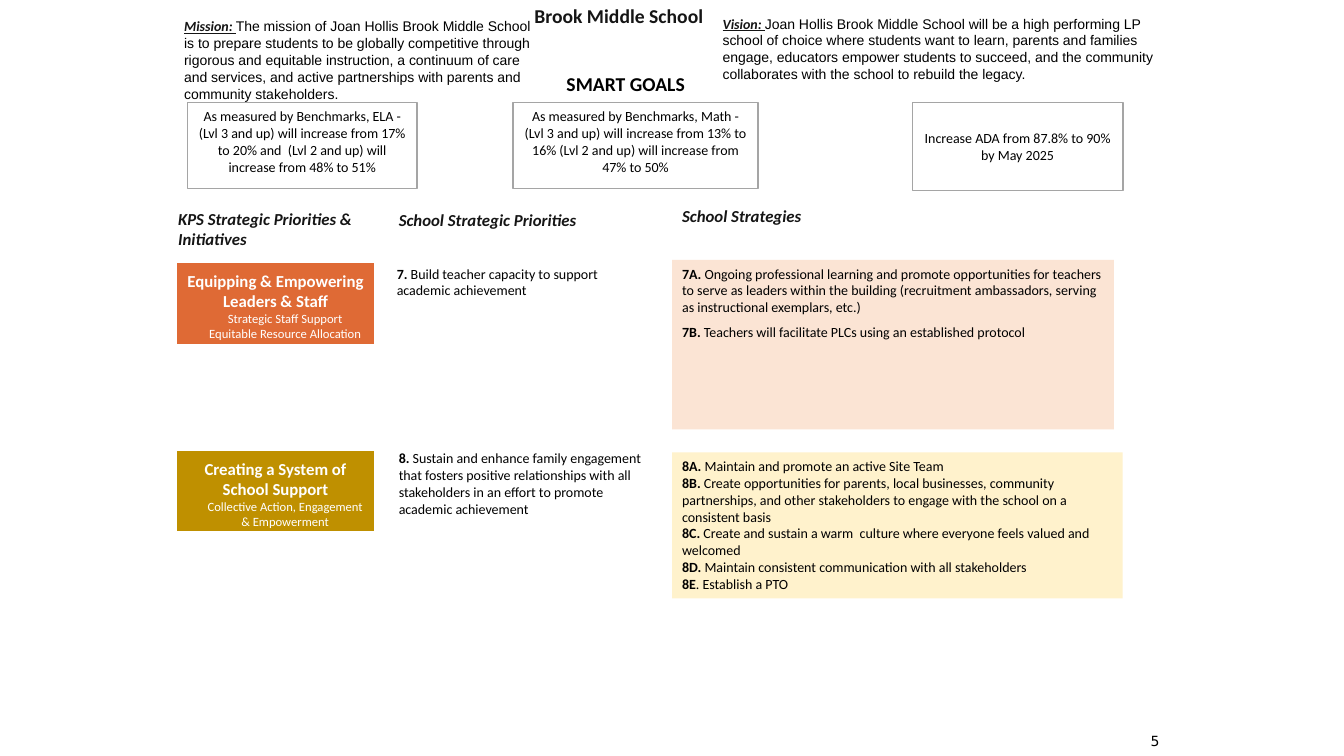
from pptx import Presentation
from pptx.dml.color import RGBColor
from pptx.enum.shapes import MSO_SHAPE
from pptx.enum.text import MSO_ANCHOR, MSO_AUTO_SIZE, PP_ALIGN
from pptx.oxml.ns import qn
from pptx.util import Cm, Pt
from lxml import etree

RECTANGLE = MSO_SHAPE.RECTANGLE
TOP, MIDDLE = MSO_ANCHOR.TOP, MSO_ANCHOR.MIDDLE
NO_FIT = MSO_AUTO_SIZE.NONE
LEFT, CENTER, RIGHT = PP_ALIGN.LEFT, PP_ALIGN.CENTER, PP_ALIGN.RIGHT

COLORS = {
    "black": "000000", "ink": "151515", "white": "FFFFFF", "gray": "A5A5A5",
    "orange": "DF6A35", "peach": "FBE4D4", "gold": "BF9000", "cream": "FFF2CC",
}


def style(size, color="black", name="Calibri", **extra):
    values = {"size": Pt(size), "name": name, "bold": False, "italic": False}
    return {"color": color, "font": {**values, **extra}}


STYLES = {
    "text": style(10),
    "label": style(10, bold=True),
    "title": style(14, "ink", bold=True),
    "goals": style(14, bold=True),
    "heading": style(12, "ink", bold=True, italic=True),
    "lead": style(10, "ink", bold=True, italic=True, underline=True),
    "statement": style(10, name="Arial"),
    "priority": style(12, "white", bold=True),
    "initiative": style(9, "white"),
    "number": style(10, name="DejaVu Sans"),
}


def color(name):
    return RGBColor.from_string(COLORS[name])


def set_values(target, values):
    for name, value in values.items():
        setattr(target, name, value)


def write(box, paras, align=LEFT, anchor=TOP, inset=0.13, before=0):
    frame = box.text_frame
    set_values(frame, {
        "word_wrap": True, "auto_size": NO_FIT, "vertical_anchor": anchor,
        "margin_left": Cm(0.25), "margin_right": Cm(0.25),
        "margin_top": Cm(inset), "margin_bottom": Cm(inset),
    })
    for index, spans in enumerate(paras):
        para = frame.add_paragraph() if index else frame.paragraphs[0]
        set_values(para, {"alignment": align, "space_before": Pt(before)})
        indent = Cm(0.48) if spans[0][1] == "initiative" else 0
        properties = para._p.get_or_add_pPr()
        properties.set("marL", str(int(indent)))
        properties.set("indent", "0")
        etree.SubElement(properties, qn("a:buNone"))
        for text, style_name in spans:
            span = para.add_run()
            span.text = text
            set_values(span.font, STYLES[style_name]["font"])
            span.font.color.rgb = color(STYLES[style_name]["color"])


def place(box, area):
    set_values(box, dict(zip(("left", "top", "width", "height"), map(Cm, area))))


def paint(box, fill):
    box.fill.solid()
    box.fill.fore_color.rgb = color(fill)


def add_text(page, area, paras, **layout):
    box = page.shapes.add_textbox(*map(Cm, area))
    write(box, paras, **layout)


def add_panel(page, area, fill, line, width, paras, **layout):
    box = page.shapes.add_shape(RECTANGLE, *map(Cm, area))
    box.shadow.inherit = False
    paint(box, fill)
    box.line.color.rgb = color(line)
    box.line.width = Pt(width)
    write(box, paras, align=CENTER, **layout)


def fill_list(box, area, fill, items, before):
    place(box, area)
    paint(box, fill)
    paras = [[(label, "label"), (text, "text")] for label, text in items]
    write(box, paras, before=before)


def add_priority(page, top, fill, name, initiatives):
    paras = [[(name, "priority")]] + [[(text, "initiative")] for text in initiatives]
    add_panel(page, (4.39, top, 5.11, 2.16), fill, "white", 4, paras, inset=0.25)


def main():
    deck = Presentation()
    deck.slide_width, deck.slide_height = Cm(33.87), Cm(19.05)
    page = deck.slides.add_slide(deck.slide_layouts[3])
    title, staff_list, support_list = page.placeholders

    place(title, (12.85, -0.15, 5.49, 1.12))
    write(title, [[("Brook Middle School", "title")]], align=CENTER, inset=0.25)
    add_text(page, (13.56, 1.57, 4.42, 1.12), [[("SMART GOALS", "goals")]],
             align=CENTER, inset=0.25)

    statements = [
        ((4.39, 0.2, 9.4, 2.64), "Mission: ",
         "The mission of Joan Hollis Brook Middle School is to prepare students to be "
         "globally competitive through rigorous and equitable instruction, a continuum of "
         "care and services, and active partnerships with parents and community stakeholders."),
        ((17.96, 0.13, 11.51, 2.24), "Vision: ",
         "Joan Hollis Brook Middle School will be a high performing LP school of choice where "
         "students want to learn, parents and families engage, educators empower students to "
         "succeed, and the community collaborates with the school to rebuild the legacy."),
    ]
    for area, lead, text in statements:
        add_text(page, area, [[(lead, "lead"), (text, "statement")]], inset=0.25)

    goals = [
        ((4.72, 2.59, 5.79, 2.16), TOP,
         "As measured by Benchmarks, ELA - (Lvl 3 and up) will increase from 17% to 20% and  "
         "(Lvl 2 and up) will increase from 48% to 51%"),
        ((12.93, 2.59, 6.17, 2.16), TOP,
         "As measured by Benchmarks, Math - (Lvl 3 and up) will increase from 13% to 16% "
         "(Lvl 2 and up) will increase from 47% to 50%"),
        ((22.99, 2.59, 5.31, 2.21), MIDDLE, "Increase ADA from 87.8% to 90% by May 2025"),
    ]
    for area, anchor, text in goals:
        add_panel(page, area, "white", "gray", 1, [[(text, "text")]], anchor=anchor)

    headings = [
        ((4.24, 5, 5.11, 1.55), "KPS Strategic Priorities & Initiatives"),
        ((9.8, 5.03, 5.11, 1.02), "School Strategic Priorities"),
        ((16.94, 4.93, 5.11, 1.02), "School Strategies"),
    ]
    for area, text in headings:
        add_text(page, area, [[(text, "heading")]], inset=0.25)

    add_priority(page, 6.57, "orange", "Equipping & Empowering Leaders & Staff",
                 ["Strategic Staff Support", "Equitable Resource Allocation"])
    add_priority(page, 11.3, "gold", "Creating a System of School Support",
                 ["Collective Action, Engagement & Empowerment"])

    school_priorities = [
        ((9.75, 6.55, 6.73, 2.87), "7. ",
         "Build teacher capacity to support academic achievement"),
        ((9.8, 11.2, 6.73, 3.89), "8. ",
         "Sustain and enhance family engagement that fosters positive relationships with all "
         "stakeholders in an effort to promote academic achievement"),
    ]
    for area, label, text in school_priorities:
        add_text(page, area, [[(label, "label"), (text, "text")]], before=6)

    fill_list(staff_list, (16.94, 6.55, 11.13, 4.27), "peach", [
        ("7A. ", "Ongoing professional learning and promote opportunities for teachers to serve "
                 "as leaders within the building (recruitment ambassadors, serving as "
                 "instructional exemplars, etc.)"),
        ("7B. ", "Teachers will facilitate PLCs using an established protocol"),
    ], before=6)
    fill_list(support_list, (16.94, 11.4, 11.35, 3.68), "cream", [
        ("8A. ", "Maintain and promote an active Site Team"),
        ("8B. ", "Create opportunities for parents, local businesses, community partnerships, "
                 "and other stakeholders to engage with the school on a consistent basis"),
        ("8C. ", "Create and sustain a warm  culture where everyone feels valued and welcomed"),
        ("8D. ", "Maintain consistent communication with all stakeholders"),
        ("8E", ". Establish a PTO"),
    ], before=0)

    add_text(page, (23.75, 18.16, 5.72, 1.02), [[("5", "number")]],
             align=RIGHT, anchor=MIDDLE)
    deck.save("out.pptx")


if __name__ == "__main__":
    main()
